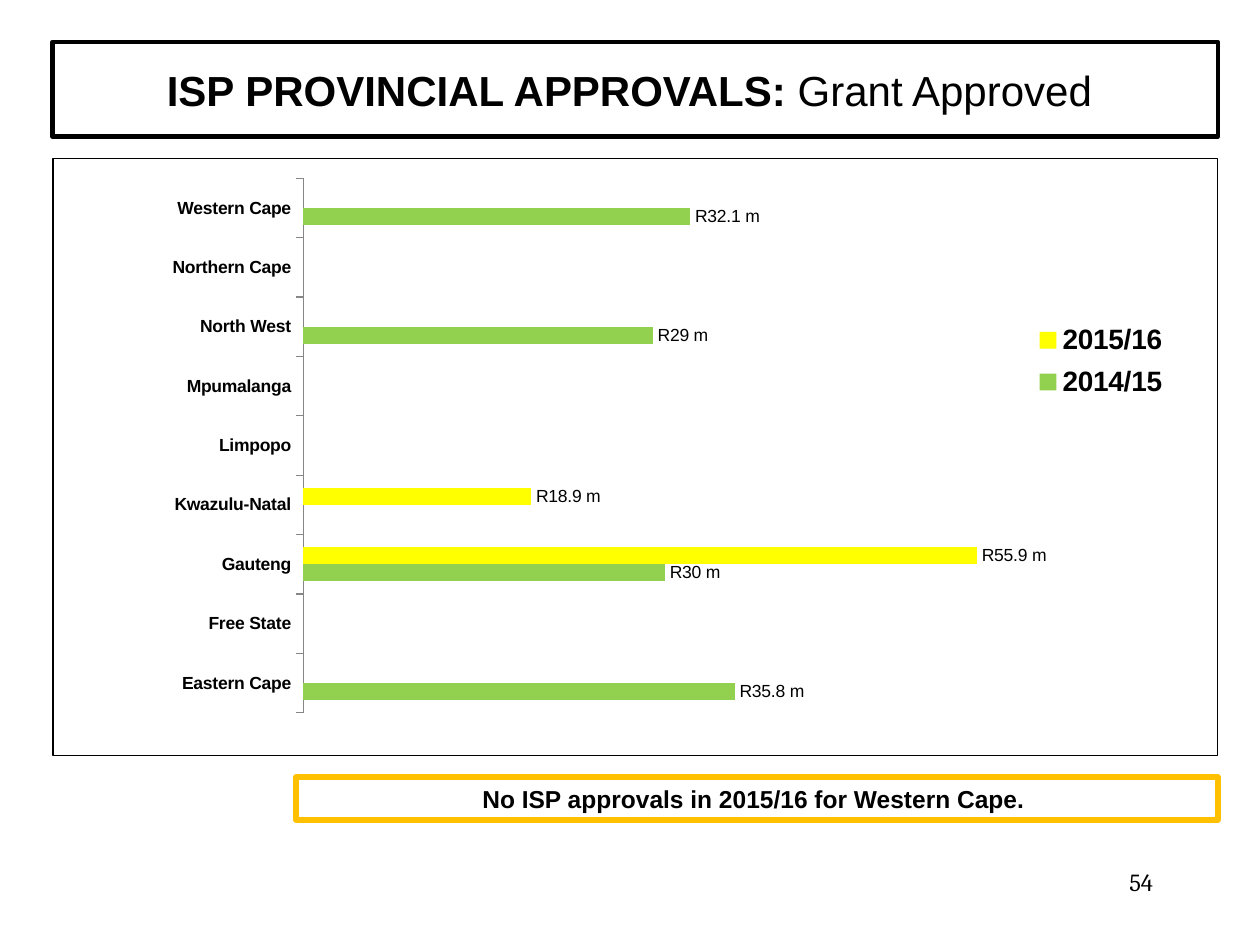
from lxml.etree import SubElement
from pptx import Presentation
from pptx.chart.data import CategoryChartData
from pptx.dml.color import RGBColor
from pptx.enum.chart import XL_CHART_TYPE, XL_LABEL_POSITION, XL_LEGEND_POSITION, XL_TICK_MARK
from pptx.enum.shapes import MSO_SHAPE
from pptx.enum.text import MSO_ANCHOR, PP_ALIGN
from pptx.oxml import parse_xml
from pptx.oxml.ns import nsdecls, qn
from pptx.util import Inches, Pt

COLORS = {"text": "000000", "paper": "FFFFFF", "axis": "868686",
          "note": "FFC000", "2014/15": "92D050", "2015/16": "FFFF00"}
PROVINCES = ["Eastern Cape", "Free State", "Gauteng", "Kwazulu-Natal", "Limpopo",
             "Mpumalanga", "North West", "Northern Cape", "Western Cape"]
GRANTS = {
    "2014/15": {"Eastern Cape": 35.8, "Gauteng": 30, "North West": 29, "Western Cape": 32.1},
    "2015/16": {"Gauteng": 55.9, "Kwazulu-Natal": 18.9},
}


class SlideBuilder:
    """Places styled elements on a grid of 120 columns by 90 rows."""
    COLUMNS, ROWS = 120, 90

    def __init__(self, deck):
        self.deck = deck
        self.slide = deck.slides.add_slide(deck.slide_layouts[5])

    def area(self, column, row, columns, rows):
        across = self.deck.slide_width / self.COLUMNS
        down = self.deck.slide_height / self.ROWS
        return (round(column * across), round(row * down),
                round(columns * across), round(rows * down))

    def color(self, name):
        return RGBColor.from_string(COLORS[name])

    def style(self, font, size, bold=False, face="Arial"):
        font.name, font.size, font.bold = face, Pt(size), bold
        font.color.rgb = self.color("text")

    def outline(self, line, name, width):
        line.color.rgb = self.color(name)
        line.width = Pt(width)

    def title(self, heading, subject, cells):
        title = self.slide.shapes.title
        title.left, title.top, title.width, title.height = self.area(*cells)
        self.outline(title.line, "text", 2.5)
        title.text_frame.vertical_anchor = MSO_ANCHOR.MIDDLE
        paragraph = title.text_frame.paragraphs[0]
        paragraph.alignment = PP_ALIGN.CENTER
        self.style(paragraph.font, 24)
        for words, bold in ((heading, True), (subject, False)):
            run = paragraph.add_run()
            run.text, run.font.bold = words, bold

    def note(self, words, cells):
        note = self.slide.shapes.add_shape(MSO_SHAPE.RECTANGLE, *self.area(*cells))
        note.shadow.inherit = False
        note.fill.background()
        self.outline(note.line, "note", 3)
        note.text_frame.word_wrap = True
        note.text_frame.text = words
        paragraph = note.text_frame.paragraphs[0]
        paragraph.alignment = PP_ALIGN.CENTER
        self.style(paragraph.font, 14, bold=True)

    def page_number(self, number, cells):
        frame = self.slide.shapes.add_textbox(*self.area(*cells)).text_frame
        frame.word_wrap = True
        frame.text = number
        paragraph = frame.paragraphs[0]
        paragraph.alignment = PP_ALIGN.RIGHT
        self.style(paragraph.font, 14, face="Cambria")

    def bar_chart(self, categories, series_values, cells):
        chart_data = CategoryChartData()
        chart_data.categories = categories
        for name, values in series_values.items():
            chart_data.add_series(name, [values.get(category) for category in categories])
        chart = self.slide.shapes.add_chart(
            XL_CHART_TYPE.BAR_CLUSTERED, *self.area(*cells), chart_data).chart
        chart.has_title = False
        self.style(chart.font, 10, bold=True)

        plot = chart.plots[0]
        plot.gap_width, plot.overlap, plot.vary_by_categories = 150, 0, False
        for series in plot.series:
            series.format.fill.solid()
            series.format.fill.fore_color.rgb = self.color(series.name)
            labels = series.data_labels
            labels.show_value = True
            labels.position = XL_LABEL_POSITION.OUTSIDE_END
            labels.number_format = '"R"General" m"'
            labels.number_format_is_linked = False
            self.style(labels.font, 10)

        chart.category_axis.major_tick_mark = XL_TICK_MARK.OUTSIDE
        chart.category_axis.has_major_gridlines = False
        self.outline(chart.category_axis.format.line, "axis", 0.75)
        scale = chart.value_axis
        scale.minimum_scale, scale.maximum_scale = 0, 60
        scale.has_major_gridlines = False
        scale.visible = False

        chart.has_legend = True
        chart.legend.position = XL_LEGEND_POSITION.RIGHT
        chart.legend.include_in_layout = False
        self.style(chart.legend.font, 16, bold=True)

        chart_xml = chart.element.find(qn("c:chart"))
        self.place(chart_xml.find(qn("c:plotArea")), 0.215, 0.034, 0.621, 0.895, inner=True)
        self.place(chart_xml.find(qn("c:legend")), 0.83, 0.26, 0.14, 0.16)
        chart_xml.addnext(parse_xml(
            f'<c:spPr {nsdecls("c", "a")}>'
            f'<a:solidFill><a:srgbClr val="{COLORS["paper"]}"/></a:solidFill>'
            f'<a:ln w="{Pt(0.75)}"><a:solidFill><a:srgbClr val="{COLORS["text"]}"/>'
            '</a:solidFill></a:ln></c:spPr>'))

    def place(self, part, left, top, width, height, inner=False):
        """Fix a chart part at shares of the chart's size."""
        layout = part.find(qn("c:layout"))
        if layout is None:
            layout = parse_xml(f'<c:layout {nsdecls("c")}/>')
            if inner:
                part.insert(0, layout)
            else:
                part.find(qn("c:legendPos")).addnext(layout)
        for child in list(layout):
            layout.remove(child)
        manual = SubElement(layout, qn("c:manualLayout"))
        settings = {"layoutTarget": "inner"} if inner else {}
        settings |= {"xMode": "edge", "yMode": "edge",
                     "x": left, "y": top, "w": width, "h": height}
        for tag, value in settings.items():
            SubElement(manual, qn(f"c:{tag}")).set("val", str(value))


def main():
    deck = Presentation()
    deck.slide_width, deck.slide_height = Inches(10), Inches(7.5)
    builder = SlideBuilder(deck)
    builder.page_number("54", (86, 82, 25, 6))
    builder.title("ISP PROVINCIAL APPROVALS: ", "Grant Approved ", (5, 4, 111, 9))
    builder.bar_chart(PROVINCES, GRANTS, (5, 15, 111, 57))
    builder.note("No ISP approvals in 2015/16 for Western Cape. ", (28.2, 74, 87.8, 4.1))
    deck.save("out.pptx")


if __name__ == "__main__":
    main()
